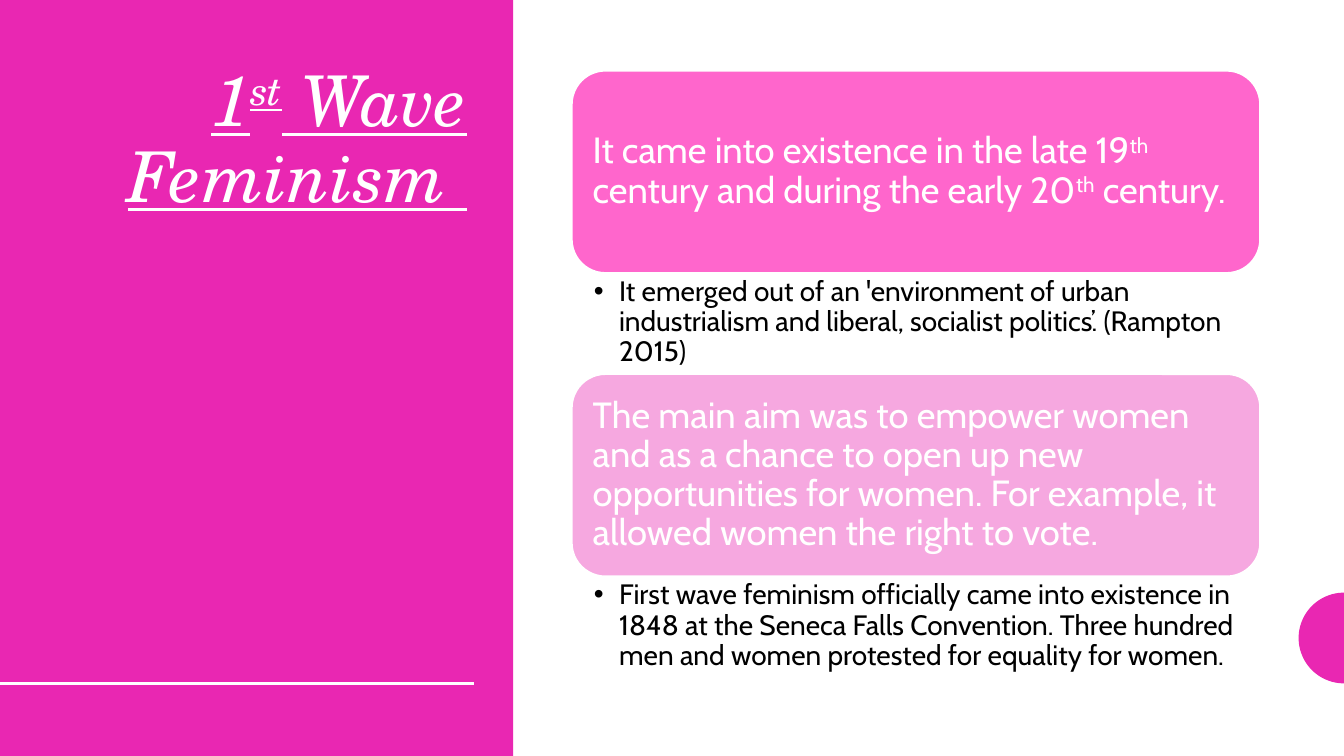
from math import cos, pi, sin

from pptx import Presentation
from pptx.dml.color import RGBColor
from pptx.enum.shapes import MSO_CONNECTOR, MSO_SHAPE
from pptx.enum.text import MSO_ANCHOR, MSO_AUTO_SIZE, PP_ALIGN
from pptx.oxml.ns import qn
from pptx.util import Inches, Pt
from lxml.etree import SubElement

MAGENTA = RGBColor(0xE9, 0x27, 0xB2)
PINK = RGBColor(0xFF, 0x66, 0xCC)
PALE_PINK = RGBColor(0xF6, 0xA8, 0xE0)
WHITE = RGBColor(0xFF, 0xFF, 0xFF)
BLACK = RGBColor(0, 0, 0)

# Content: text runs are (text, is superscript)
TITLE = [("1", False), ("st", True), (" Wave Feminism ", False)]
SECTIONS = [
    (PINK,
     [("It came into existence in the late 19", False), ("th", True),
      (" century and during the early 20", False), ("th", True),
      (" century.", False)],
     [("It emerged out of an 'environment of urban industrialism and liberal, "
       "socialist politics’. (Rampton 2015)", False)]),
    (PALE_PINK,
     [("The main aim was to empower women and as a chance to open up new "
       "opportunities for women. For example, it allowed women the right to "
       "vote.", False)],
     [("First wave feminism officially came into existence in 1848 at the "
       "Seneca Falls Convention. Three hundred men and women protested for "
       "equality for women.", False)]),
]

# Layout in inches
WIDTH, HEIGHT = 13.33, 7.5
PANEL_WIDTH = 5.09
RULE_TOP, RULE_END = 6.78, 4.7
COLUMN_LEFT, COLUMN_TOP, COLUMN_WIDTH = 5.67, 0.7, 6.83
CARD_HEIGHT, NOTE_HEIGHT = 2.01, 1.0
DOT_RADIUS = 0.45


def place(shape, left, top, width, height):
    shape.left, shape.top = Inches(left), Inches(top)
    shape.width, shape.height = Inches(width), Inches(height)


def paint(shape, color):
    shape.shadow.inherit = False
    shape.fill.solid()
    shape.fill.fore_color.rgb = color
    shape.line.fill.background()


def write(shape, runs, font, size, color, anchor, insets):
    """Fill the shape with one paragraph and return that paragraph."""
    frame = shape.text_frame
    frame.word_wrap = True
    frame.auto_size = MSO_AUTO_SIZE.NONE
    frame.vertical_anchor = anchor
    (frame.margin_left, frame.margin_top,
     frame.margin_right, frame.margin_bottom) = map(Inches, insets)
    paragraph = frame.paragraphs[0]
    paragraph.alignment = PP_ALIGN.LEFT
    paragraph.line_spacing = 0.9
    paragraph.space_before = Pt(0)
    paragraph.font.name = font
    paragraph.font.size = Pt(size)
    paragraph.font.color.rgb = color
    for text, superscript in runs:
        run = paragraph.add_run()
        run.text = text
        if superscript:
            run._r.get_or_add_rPr().set("baseline", "30000")
    return paragraph


presentation = Presentation()
presentation.slide_width = Inches(WIDTH)
presentation.slide_height = Inches(HEIGHT)
slide = presentation.slides.add_slide(
    presentation.slide_layouts.get_by_name("Two Content"))
shapes = slide.shapes
title, *notes = [shape for shape in slide.placeholders]

# Half circle on the right edge
arc = [(WIDTH - DOT_RADIUS * sin(pi * step / 48),
        RULE_TOP - DOT_RADIUS + DOT_RADIUS * cos(pi * step / 48))
       for step in range(49)]
points = [(Inches(x), Inches(y)) for x, y in arc]
builder = shapes.build_freeform(*points[0])
builder.add_line_segments(points[1:], close=True)
paint(builder.convert_to_shape(), MAGENTA)

# Left panel with its rule
panel = shapes.add_shape(MSO_SHAPE.RECTANGLE, 0, 0,
                         Inches(PANEL_WIDTH), Inches(HEIGHT))
paint(panel, MAGENTA)
rule = shapes.add_connector(MSO_CONNECTOR.STRAIGHT, 0, Inches(RULE_TOP),
                            Inches(RULE_END), Inches(RULE_TOP))
rule.line.color.rgb = WHITE
rule.line.width = Pt(2)
SubElement(rule.element.spPr, qn("a:effectLst"))

# Title, brought in front of the panel
panel.element.getparent().append(title.element)
place(title, 0.83, 0.61, 3.9, 5.42)
heading = write(title, TITLE, "TeX Gyre Schola", 50, WHITE,
                MSO_ANCHOR.TOP, (0.1, 0.05, 0.1, 0.05))
heading.alignment = PP_ALIGN.RIGHT
heading.font.italic = True
heading.font.underline = True

# Cards, each with a bulleted note below
for row, ((color, statement, detail), note) in enumerate(zip(SECTIONS, notes)):
    top = COLUMN_TOP + row * (CARD_HEIGHT + NOTE_HEIGHT)
    card = shapes.add_shape(MSO_SHAPE.ROUNDED_RECTANGLE, 0, 0, 0, 0)
    place(card, COLUMN_LEFT, top, COLUMN_WIDTH, CARD_HEIGHT)
    paint(card, color)
    card.line.color.rgb = WHITE
    card.line.width = Pt(1.5)
    # The preset adds its own inset for the rounded corners
    write(card, statement, "Cabin", 26, WHITE, MSO_ANCHOR.MIDDLE, [0.11] * 4)

    place(note, COLUMN_LEFT, top + CARD_HEIGHT, COLUMN_WIDTH, NOTE_HEIGHT)
    bullet = write(note, detail, "Cabin", 20, BLACK, MSO_ANCHOR.TOP,
                   (0.22, 0.04, 0.2, 0.04))
    properties = bullet._p.get_or_add_pPr()
    properties.set("marL", str(Inches(0.25)))
    properties.set("indent", str(Inches(-0.25)))

presentation.save("out.pptx")
